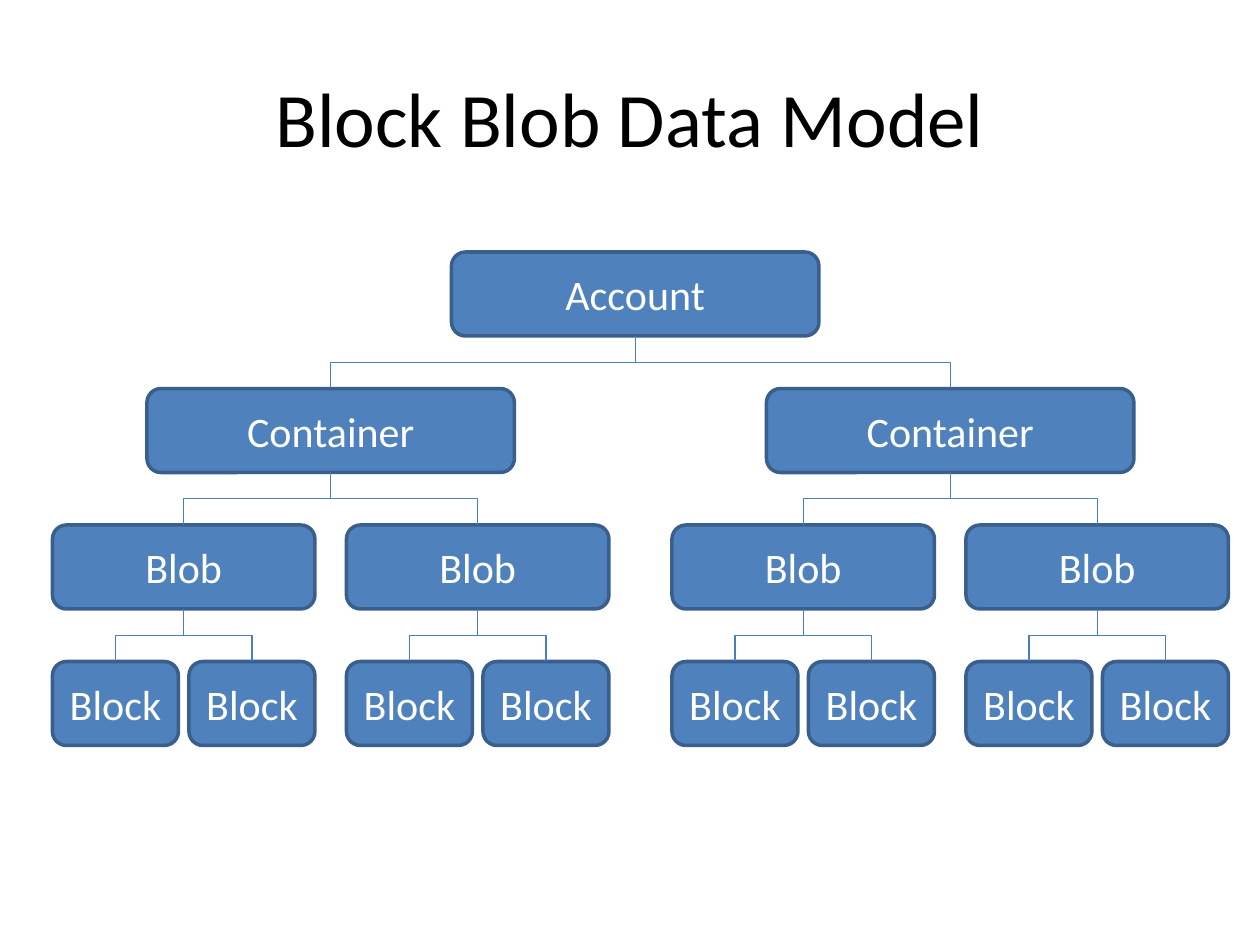
"""Build the Block Blob Data Model slide, a four-level tree."""
import lxml.etree
import pptx
import pptx.dml.color
import pptx.enum.shapes
import pptx.enum.text
import pptx.oxml.ns
import pptx.util

Pt = pptx.util.Pt
COLOURS = {"title": "000000", "label": "FFFFFF", "fill": "4F81BD", "border": "3A5F8C", "link": "4B7EBC"}
FIRST_TOP, LEVEL_STEP, NODE_HEIGHT = 144, 78, 48
LEVELS = [
    ("Account", 210, [258]),
    ("Container", 210, [84, 438]),
    ("Blob", 150, [30, 198, 384, 552]),
    ("Block", 72, [30, 108, 198, 276, 384, 462, 552, 630]),
]


def colour(name):
    return pptx.dml.color.RGBColor.from_string(COLOURS[name])


def write(shape, text, size, colour_name):
    frame = shape.text_frame
    frame.word_wrap = True
    frame.vertical_anchor = pptx.enum.text.MSO_ANCHOR.MIDDLE
    para = frame.paragraphs[0]
    para.alignment = pptx.enum.text.PP_ALIGN.CENTER
    span = para.add_run()
    span.text = text
    for key, value in {"name": "Calibri", "size": Pt(size)}.items():
        setattr(span.font, key, value)
    span.font.color.rgb = colour(colour_name)


deck = pptx.Presentation()
deck.slide_width, deck.slide_height = Pt(720), Pt(540)
page = deck.slides.add_slide(deck.slide_layouts[6])

title = page.shapes.add_textbox(Pt(36), Pt(21.6), Pt(648), Pt(90))
write(title, "Block Blob Data Model", 44, "title")

tree = []
for depth, (label, width, lefts) in enumerate(LEVELS):
    top = FIRST_TOP + depth * LEVEL_STEP
    nodes = []
    for left in lefts:
        box = page.shapes.add_shape(
            pptx.enum.shapes.MSO_SHAPE.ROUNDED_RECTANGLE, Pt(left), Pt(top), Pt(width), Pt(NODE_HEIGHT))
        box.shadow.inherit = False
        box.fill.solid()
        box.fill.fore_color.rgb = colour("fill")
        box.line.color.rgb = colour("border")
        box.line.width = Pt(2)
        write(box, label, 24, "label")
        nodes.append((box, left + width / 2))
    tree.append(nodes)

gap = LEVEL_STEP - NODE_HEIGHT
for depth, (parents, children) in enumerate(zip(tree, tree[1:])):
    middle = FIRST_TOP + depth * LEVEL_STEP + NODE_HEIGHT + gap / 2
    for index, (child, child_x) in enumerate(children):
        parent, parent_x = parents[index // 2]
        span_width = abs(child_x - parent_x)
        link = page.shapes.add_connector(pptx.enum.shapes.MSO_CONNECTOR.ELBOW, 0, 0, 0, 0)
        link.begin_connect(parent, 2)
        link.end_connect(child, 0)
        placement = {
            "left": Pt((parent_x + child_x - gap) / 2),
            "top": Pt(middle - span_width / 2),
            "width": Pt(gap),
            "height": Pt(span_width),
        }
        for key, value in placement.items():
            setattr(link, key, value)
        goes_right = child_x > parent_x
        turn = {"rot": "16200000" if goes_right else "5400000", "flipH": "1" if goes_right else "0", "flipV": "0"}
        properties = link._element.spPr
        for key, value in turn.items():
            properties.xfrm.set(key, value)
        link.line.color.rgb = colour("link")
        link.line.width = Pt(0.75)
        lxml.etree.SubElement(properties, pptx.oxml.ns.qn("a:effectLst"))

deck.save("out.pptx")
